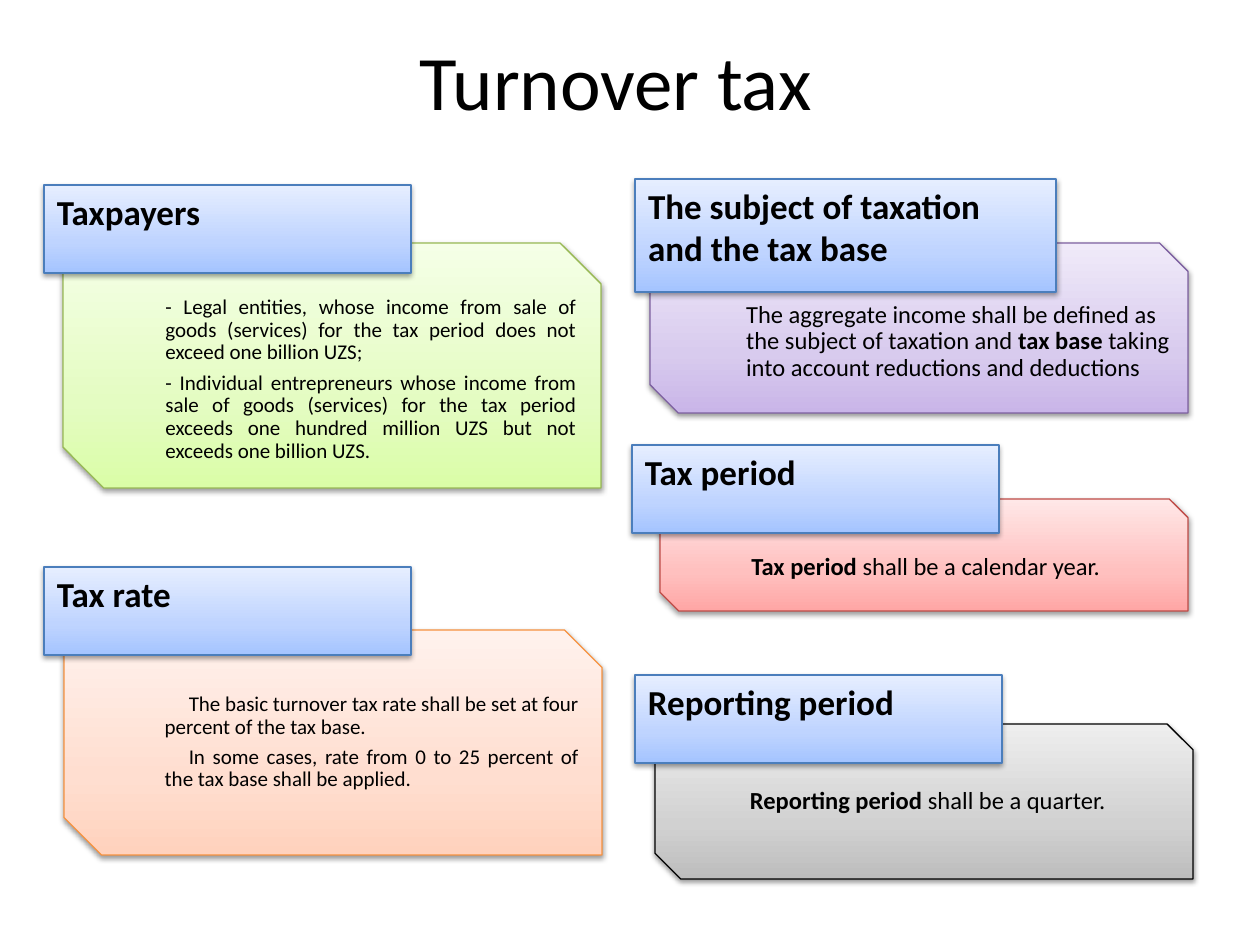
from copy import deepcopy
from typing import NamedTuple

from lxml.etree import SubElement
from pptx import Presentation
from pptx.dml.color import RGBColor
from pptx.enum.shapes import MSO_SHAPE
from pptx.enum.text import MSO_ANCHOR, PP_ALIGN
from pptx.oxml.ns import qn
from pptx.util import Emu, Pt

PX_PER_INCH = 126
FONT = "Calibri"
COLORS = {"text": "000000", "shadow": "000000"}
# Gradient stops from bottom to top, then the outline
THEMES = {
    "blue": ("A4C4FF", "BFD4FF", "E6EEFF", "4B7EBC"),
    "green": ("DAFDA7", "E4FCC2", "F5FFE7", "98B955"),
    "purple": ("C9B5E8", "D8CBEE", "F0EAF9", "7D60A0"),
    "red": ("FFA6A5", "FFC0BF", "FFE7E7", "BF4C48"),
    "gray": ("BDBDBD", "D1D1D1", "EEEEEE", "000000"),
    "orange": ("FFD2BD", "FFDED0", "FFF2ED", "F69240"),
}
STOP_POSITIONS = (0, 0.35, 1)


class Box(NamedTuple):
    left: int
    top: int
    width: int
    height: int


class Run(NamedTuple):
    text: str
    bold: bool = False


class Section(NamedTuple):
    heading: str
    heading_box: Box
    body_box: Box
    theme: str
    paragraphs: list[list[Run]]
    size: int = 14
    align: PP_ALIGN = PP_ALIGN.LEFT
    first_indent: int = 0
    text_drop: int = 0


SECTIONS = [
    Section("Taxpayers", Box(44, 185, 367, 88), Box(63, 243, 538, 245), "green", [
        [Run("- Legal entities, whose income from sale of goods (services) "
             "for the tax period does not exceed one billion UZS;")],
        [Run("- Individual entrepreneurs whose income from sale of goods (services) for the "
             "tax period exceeds one hundred million UZS but not exceeds one billion UZS.")],
    ], size=12, align=PP_ALIGN.JUSTIFY, text_drop=28),
    Section("The subject of taxation and the tax base",
            Box(635, 179, 421, 113), Box(650, 243, 538, 170), "purple", [
                [Run("The aggregate income shall be defined as the subject of taxation and "),
                 Run("tax base", True),
                 Run(" taking into account reductions and deductions")],
            ], text_drop=28),
    Section("Tax period", Box(632, 445, 367, 88), Box(660, 499, 528, 112), "red", [
        [Run("Tax period", True), Run(" shall be a calendar year.")],
    ], text_drop=25),
    Section("Reporting period", Box(635, 675, 367, 88), Box(655, 724, 538, 155), "gray", [
        [Run("Reporting period", True), Run(" shall be a quarter.")],
    ]),
    Section("Tax rate", Box(44, 567, 367, 88), Box(64, 630, 538, 225), "orange", [
        [Run("The basic turnover tax rate shall be set at four percent of the tax base.")],
        [Run("In some cases, rate from 0 to 25 percent of the tax base shall be applied.")],
    ], size=12, align=PP_ALIGN.JUSTIFY, first_indent=24),
]


def px(length: int) -> Emu:
    return Emu(round(length * 914400 / PX_PER_INCH))


def place(box: Box) -> list[Emu]:
    return [px(length) for length in box]


def write(frame, paragraphs: list[list[Run]], *, size: int,
          align: PP_ALIGN = PP_ALIGN.LEFT, anchor: MSO_ANCHOR = MSO_ANCHOR.TOP,
          insets: tuple[int, int, int, int] = (13, 6, 13, 6), line_spacing: float = 1,
          space_after: float = 0, first_indent: int = 0) -> None:
    """Fill a text frame; insets are left, top, right, bottom."""
    frame.word_wrap = True
    frame.vertical_anchor = anchor
    (frame.margin_left, frame.margin_top,
     frame.margin_right, frame.margin_bottom) = map(px, insets)
    for index, runs in enumerate(paragraphs):
        paragraph = frame.add_paragraph() if index else frame.paragraphs[0]
        paragraph.alignment = align
        paragraph.line_spacing = line_spacing
        paragraph.space_after = Pt(space_after)
        if first_indent:
            paragraph._p.get_or_add_pPr().set("indent", str(px(first_indent)))
        for part in runs:
            run = paragraph.add_run()
            run.text = part.text
            run.font.name = FONT
            run.font.size = Pt(size)
            run.font.bold = part.bold
            run.font.color.rgb = RGBColor.from_string(COLORS["text"])


def add_panel(slide, kind: MSO_SHAPE, box: Box, theme: str):
    """Add a shape with a three-stop vertical gradient and a soft shadow."""
    panel = slide.shapes.add_shape(kind, *place(box))
    *stop_colors, outline = THEMES[theme]
    panel.fill.gradient()
    panel.fill.gradient_angle = 90
    properties = panel._element.spPr
    stop_list = properties.find(".//" + qn("a:gsLst"))
    stop_list.insert(1, deepcopy(stop_list[0]))
    for stop, position, color in zip(panel.fill.gradient_stops, STOP_POSITIONS, stop_colors):
        stop.position = position
        stop.color.rgb = RGBColor.from_string(color)
    panel.line.color.rgb = RGBColor.from_string(outline)
    panel.line.width = Pt(0.75)

    panel.shadow.inherit = False
    shadow = SubElement(properties.find(qn("a:effectLst")), qn("a:outerShdw"),
                        blurRad=str(Pt(3.1)), dist=str(Pt(1.6)), dir="5400000",
                        rotWithShape="0")
    shadow_color = SubElement(shadow, qn("a:srgbClr"), val=COLORS["shadow"])
    SubElement(shadow_color, qn("a:alpha"), val="38000")
    return panel


def add_section(slide, section: Section) -> None:
    body = add_panel(slide, MSO_SHAPE.SNIP_2_DIAG_RECTANGLE, section.body_box, section.theme)
    write(body.text_frame, section.paragraphs, size=section.size, align=section.align,
          anchor=MSO_ANCHOR.MIDDLE, insets=(82, 4 + section.text_drop, 4, 4),
          line_spacing=0.9, space_after=round(section.size * 0.35, 1),
          first_indent=section.first_indent)
    heading = add_panel(slide, MSO_SHAPE.RECTANGLE, section.heading_box, "blue")
    write(heading.text_frame, [[Run(section.heading, True)]], size=20)


def main() -> None:
    presentation = Presentation()
    presentation.slide_width = px(1260)
    presentation.slide_height = px(945)
    slide = presentation.slides.add_slide(presentation.slide_layouts[6])
    title = slide.shapes.add_textbox(*place(Box(49, 1, 1134, 158)))
    write(title.text_frame, [[Run("Turnover tax")]], size=44,
          align=PP_ALIGN.CENTER, anchor=MSO_ANCHOR.MIDDLE)
    for section in SECTIONS:
        add_section(slide, section)
    presentation.save("out.pptx")


if __name__ == "__main__":
    main()
